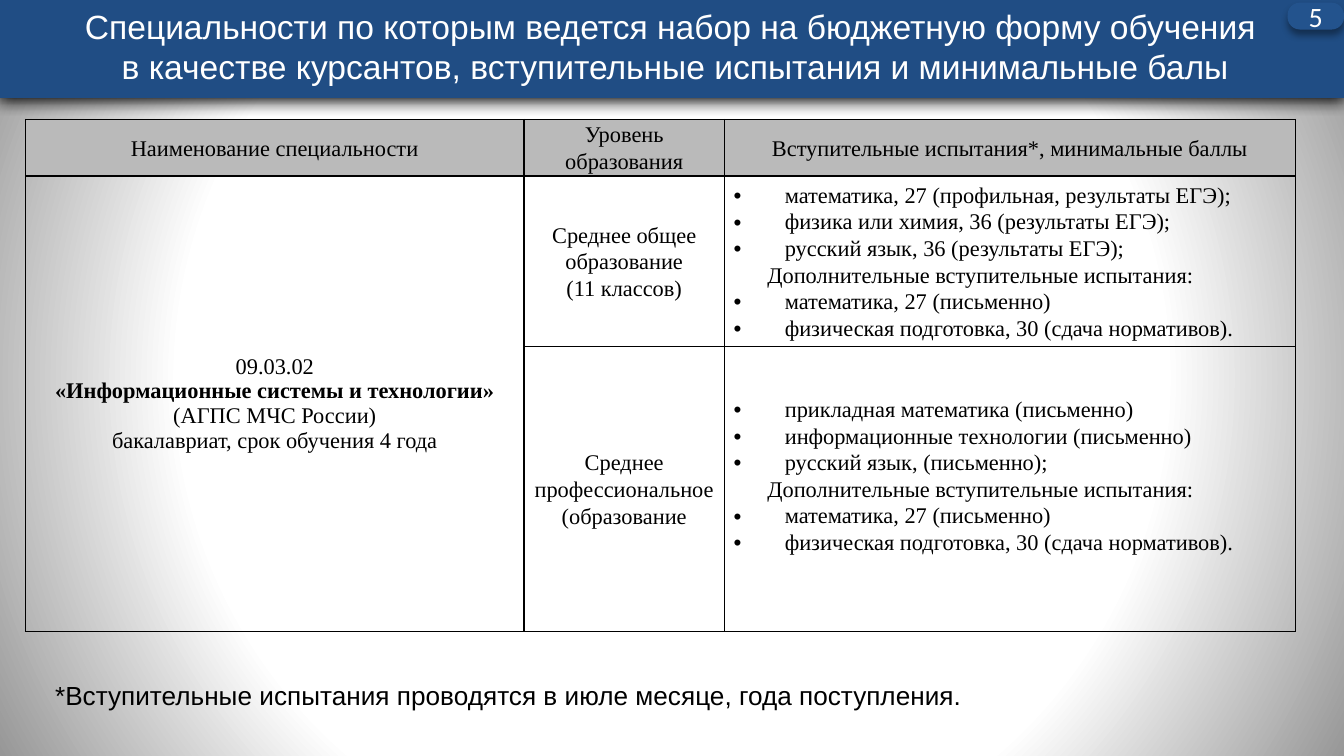
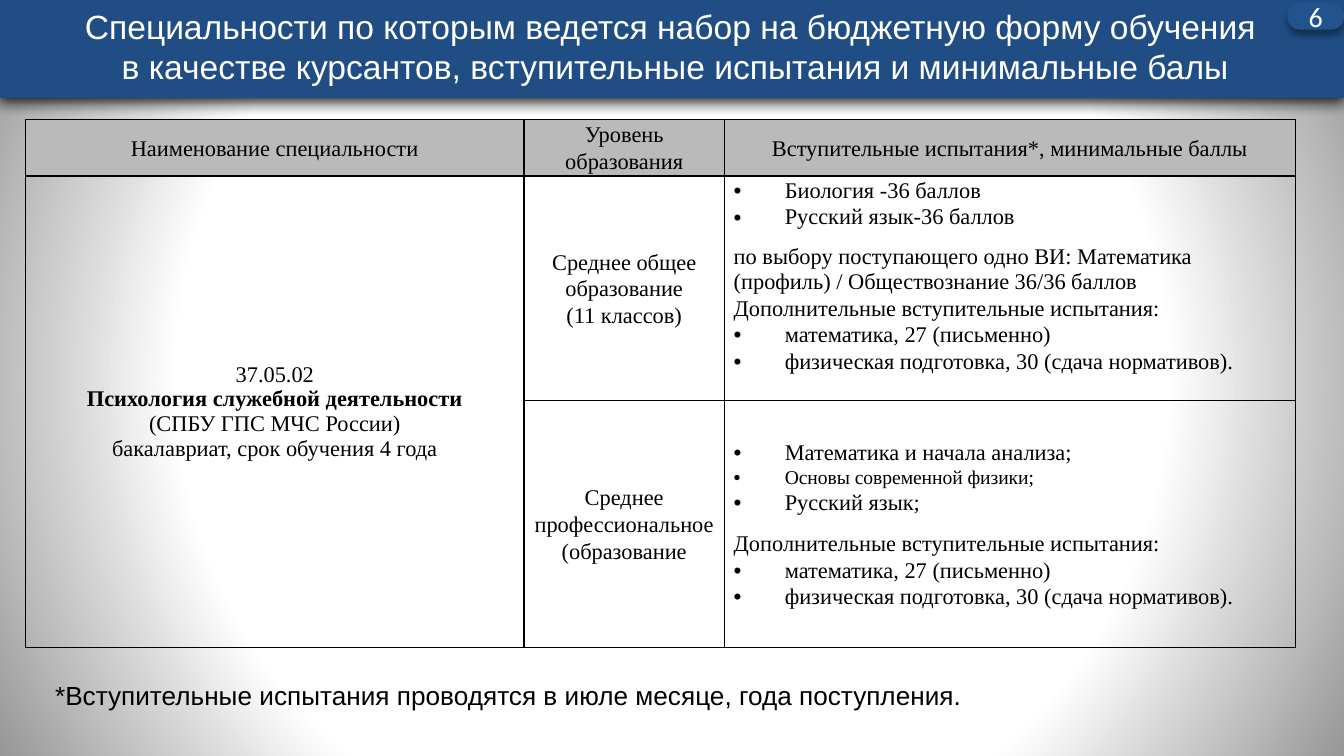
"""Build two slides on admission specialities, entrance tests and minimum scores."""
from lxml import etree
from pptx import Presentation
from pptx.dml.color import RGBColor
from pptx.enum.shapes import MSO_SHAPE
from pptx.enum.text import MSO_ANCHOR, MSO_AUTO_SIZE, PP_ALIGN
from pptx.oxml import parse_xml
from pptx.oxml.ns import qn
from pptx.util import Inches, Pt

LEFT, CENTER, JUSTIFY = PP_ALIGN.LEFT, PP_ALIGN.CENTER, PP_ALIGN.JUSTIFY
MIDDLE = MSO_ANCHOR.MIDDLE
NO_FIT = MSO_AUTO_SIZE.NONE
RECTANGLE, ROUNDED = MSO_SHAPE.RECTANGLE, MSO_SHAPE.ROUNDED_RECTANGLE
DRAWING_NS = "http://schemas.openxmlformats.org/drawingml/2006/main"

BAND, BADGE, HEADER_FILL = "204D84", "23538D", "BABABA"
WHITE, BLACK, EDGE_GRAY = "FFFFFF", "000000", "979797"

HEADING = [
    ("heading", "Специальности по которым ведется набор на бюджетную форму обучения"),
    ("heading end", "в качестве курсантов, вступительные испытания и минимальные балы"),
]
FOOTNOTE = "*Вступительные испытания проводятся в июле месяце, года поступления."
COLUMNS = [
    ("Наименование специальности", 3.71),
    ("Уровень образования", 1.49),
    ("Вступительные испытания*, минимальные баллы", 4.25),
]
LEVELS = ["Среднее общее образование\n(11 классов)", "Среднее профессиональное (образование"]
DURATION = "бакалавриат, срок обучения 4 года"
EXTRA = "Дополнительные вступительные испытания:"
EXTRA_TESTS = [
    ("bullet", "математика, 27 (письменно)"),
    ("bullet", "физическая подготовка, 30 (сдача нормативов)."),
]
SPECIALITIES = [
    {
        "number": "5",
        "speciality": ["09.03.02", "«Информационные системы и технологии»",
                       "(АГПС МЧС России)", DURATION],
        "heights": [0.42, 1.27, 2.12],
        "bottom_margins": [0, 0.2],
        "tests": [
            [("bullet", "математика, 27 (профильная, результаты ЕГЭ);"),
             ("bullet", "физика или химия, 36 (результаты ЕГЭ);"),
             ("bullet", "русский язык, 36 (результаты ЕГЭ);"),
             ("indented", EXTRA), *EXTRA_TESTS],
            [("bullet", "прикладная математика (письменно)"),
             ("bullet", "информационные технологии (письменно)"),
             ("bullet", "русский язык, (письменно);"),
             ("indented", EXTRA), *EXTRA_TESTS],
        ],
    },
    {
        "number": "6",
        "speciality": ["37.05.02", "Психология служебной деятельности",
                       "(СПБУ ГПС МЧС России)", DURATION],
        "heights": [0.42, 1.67, 1.84],
        "bottom_margins": [0.19, 0],
        "tests": [
            [("bullet", "Биология -36 баллов"),
             ("last bullet", "Русский язык-36 баллов"),
             ("single", "по выбору поступающего одно ВИ: Математика (профиль)"
                        " / Обществознание 36/36 баллов"),
             ("flush", EXTRA), *EXTRA_TESTS],
            [("bullet", "Математика и начала анализа;"),
             ("small bullet", "Основы современной физики;"),
             ("last bullet", "Русский язык;"),
             ("flush", EXTRA), *EXTRA_TESTS],
        ],
    },
]
BULLET = {"indent": 0.38, "bullet": True, "spacing": 1.07}
HEADING_STYLE = {"align": CENTER, "size": 18, "face": "Arial", "color": WHITE}
STYLES = {
    "bullet": BULLET,
    "last bullet": {**BULLET, "after": 8},
    "small bullet": {**BULLET, "size": 10.5},
    "flush": {"align": JUSTIFY, "spacing": 1.07},
    "indented": {"align": JUSTIFY, "spacing": 1.07, "indent": 0.25},
    "single": {},
    "centered": {"align": CENTER, "spacing": 1.07},
    "name": {"align": CENTER},
    "bold name": {"align": CENTER, "bold": True},
    "heading": HEADING_STYLE,
    "heading end": {**HEADING_STYLE, "indent": 0.07},
    "badge": {"align": CENTER, "size": 15, "face": "Calibri", "color": WHITE},
    "footnote": {"size": 14, "face": "Arial"},
}


def rgb(color):
    return RGBColor.from_string(color)


def box(left, top, width, height):
    return [Inches(length) for length in (left, top, width, height)]


def format_paragraph(paragraph, align=LEFT, spacing=1.0, indent=0, bullet=False, after=0,
                     size=12, face="Times New Roman", color=BLACK, bold=False):
    paragraph.alignment = align
    paragraph.line_spacing = spacing
    paragraph.space_before = Pt(0)
    paragraph.space_after = Pt(after)
    properties = paragraph._p.get_or_add_pPr()
    properties.set("marL", str(Inches(indent)))
    properties.set("indent", str(Inches(-indent if bullet else 0)))
    if bullet:
        etree.SubElement(properties, qn("a:buFont")).set("typeface", "Arial")
        etree.SubElement(properties, qn("a:buChar")).set("char", "•")
    font = paragraph.font
    font.size, font.name, font.bold = Pt(size), face, bold
    font.color.rgb = rgb(color)


def write(frame, lines):
    for index, (style, text) in enumerate(lines):
        paragraph = frame.add_paragraph() if index else frame.paragraphs[0]
        paragraph.text = text
        format_paragraph(paragraph, **STYLES[style])


def set_insets(frame, side, vertical):
    frame.margin_left = frame.margin_right = Inches(side)
    frame.margin_top = frame.margin_bottom = Inches(vertical)
    frame.vertical_anchor = MIDDLE


def paint(shape, color, opacity, blur, distance):
    shape.fill.solid()
    shape.fill.fore_color.rgb = rgb(color)
    shape.line.fill.background()
    shape.shadow.inherit = False
    effects = shape._element.spPr.find(qn("a:effectLst"))
    effects.append(parse_xml(
        f'<a:outerShdw xmlns:a="{DRAWING_NS}" blurRad="{Pt(blur)}" dist="{Pt(distance)}" '
        f'dir="5400000" algn="t" rotWithShape="0"><a:srgbClr val="{BLACK}">'
        f'<a:alpha val="{opacity * 1000}"/></a:srgbClr></a:outerShdw>'))


def set_background(slide):
    fill = slide.background.fill
    fill.solid()
    solid = next(slide._element.iter(qn("a:solidFill")))
    solid.getparent().replace(solid, parse_xml(
        f'<a:gradFill xmlns:a="{DRAWING_NS}" rotWithShape="1"><a:gsLst>'
        f'<a:gs pos="64000"><a:srgbClr val="{WHITE}"/></a:gs>'
        f'<a:gs pos="100000"><a:srgbClr val="{EDGE_GRAY}"><a:alpha val="61000"/></a:srgbClr></a:gs>'
        '</a:gsLst><a:path path="circle">'
        '<a:fillToRect l="50000" t="50000" r="50000" b="50000"/></a:path></a:gradFill>'))


def add_heading(slide):
    band = slide.shapes.add_shape(RECTANGLE, *box(-0.02, -0.04, 10.02, 0.77))
    paint(band, BAND, 100, 8.5, 1)
    set_insets(band.text_frame, 0.08, 0.04)
    write(band.text_frame, HEADING)


def add_badge(slide, number):
    badge = slide.shapes.add_shape(ROUNDED, *box(9.58, 0.02, 0.42, 0.2))
    badge.adjustments[0] = 0.46
    paint(badge, BADGE, 40, 4, 3)
    set_insets(badge.text_frame, 0.07, 0.04)
    badge.text_frame.word_wrap = False
    write(badge.text_frame, [("badge", number)])


def add_footnote(slide):
    footnote = slide.shapes.title
    footnote.left, footnote.top, footnote.width, footnote.height = box(0.33, 4.94, 9.18, 0.47)
    frame = footnote.text_frame
    frame.auto_size = NO_FIT
    set_insets(frame, 0.08, 0.04)
    write(frame, [("footnote", FOOTNOTE)])


def format_cell(cell, is_header):
    set_insets(cell, 0.07, 0)
    properties = cell._tc.get_or_add_tcPr()
    for side in ("lnL", "lnR", "lnT", "lnB"):
        properties.append(parse_xml(
            f'<a:{side} xmlns:a="{DRAWING_NS}" w="{Pt(1)}"><a:solidFill>'
            f'<a:srgbClr val="{BLACK}"/></a:solidFill></a:{side}>'))
    if is_header:
        cell.fill.solid()
        cell.fill.fore_color.rgb = rgb(HEADER_FILL)
    else:
        cell.fill.background()


def add_tests_table(slide, content):
    heights = content["heights"]
    widths = [width for _, width in COLUMNS]
    table = slide.shapes.add_table(len(heights), len(widths),
                                   *box(0.19, 0.89, sum(widths), sum(heights))).table
    table.first_row = table.horz_banding = False
    for column, width in zip(table.columns, widths):
        column.width = Inches(width)
    for index, (row, height) in enumerate(zip(table.rows, heights)):
        row.height = Inches(height)
        for cell in row.cells:
            format_cell(cell, index == 0)

    for index, (label, _) in enumerate(COLUMNS):
        write(table.cell(0, index).text_frame, [("centered", label)])
    table.cell(1, 0).merge(table.cell(2, 0))
    name_styles = ["name", "bold name", "name", "name"]
    write(table.cell(1, 0).text_frame, list(zip(name_styles, content["speciality"])))
    rows = zip(LEVELS, content["tests"], content["bottom_margins"])
    for index, (level, tests, bottom) in enumerate(rows, 1):
        write(table.cell(index, 1).text_frame, [("centered", level)])
        tests_cell = table.cell(index, 2)
        tests_cell.margin_bottom = Inches(bottom)
        write(tests_cell.text_frame, tests)


def main():
    presentation = Presentation()
    presentation.slide_width = Inches(10)
    presentation.slide_height = Inches(10) * 9 // 16
    title_only = presentation.slide_layouts[5]
    for content in SPECIALITIES:
        slide = presentation.slides.add_slide(title_only)
        set_background(slide)
        add_heading(slide)
        add_badge(slide, content["number"])
        add_tests_table(slide, content)
        add_footnote(slide)
    presentation.save("out.pptx")


if __name__ == "__main__":
    main()
